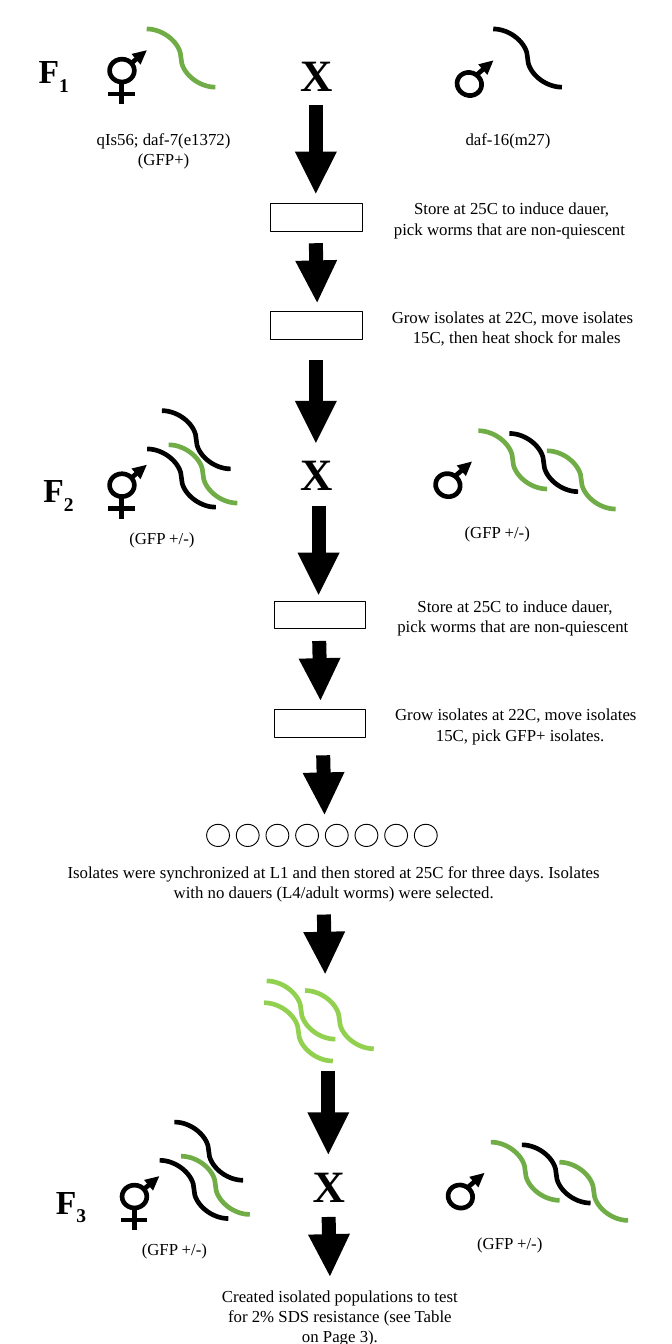
"""Builds a one-slide flow chart of a three-generation worm cross."""
from lxml.etree import SubElement
from pptx import Presentation
from pptx.dml.color import RGBColor
from pptx.enum.shapes import MSO_CONNECTOR as LINK, MSO_SHAPE as SHAPE
from pptx.enum.text import MSO_AUTO_SIZE as FIT, PP_ALIGN as ALIGN
from pptx.oxml.ns import qn
from pptx.util import Pt

BLACK = RGBColor(0x00, 0x00, 0x00)
GREEN = RGBColor(0x70, 0xAD, 0x47)
LIME = RGBColor(0x92, 0xD0, 0x50)
FONT = "Times New Roman"
SYMBOL_LINE = 5
STEP_LINE = 15


def add_label(slide, text, left, top, width, height, size=18, bold=False, wrap=False):
    label = slide.shapes.add_textbox(Pt(left), Pt(top), Pt(width), Pt(height))
    frame = label.text_frame
    frame.text = text
    frame.word_wrap = wrap
    frame.auto_size = FIT.SHAPE_TO_FIT_TEXT
    for paragraph in frame.paragraphs:
        paragraph.alignment = ALIGN.CENTER
        for run in paragraph.runs:
            style_run(run, size, bold)
    return label


def style_run(run, size, bold):
    run.font.name = FONT
    run.font.size = Pt(size)
    run.font.bold = bold
    run.font.color.rgb = BLACK


def add_generation(slide, number, left, top):
    label = add_label(slide, "F", left, top, 49, 51, 36, True)
    subscript = label.text_frame.paragraphs[0].add_run()
    subscript.text = str(number)
    style_run(subscript, 36, True)
    subscript.font._element.set("baseline", "-25000")


def add_cross_mark(slide, left, top):
    add_label(slide, "X", left, top, 50, 65.5, 48, True)


def add_outline(slide, kind, left, top, width, height, weight=1):
    outline = slide.shapes.add_shape(kind, Pt(left), Pt(top), Pt(width), Pt(height))
    outline.shadow.inherit = False
    outline.fill.background()
    outline.line.color.rgb = BLACK
    outline.line.width = Pt(weight)
    return outline


def add_link(slide, x1, y1, x2, y2, weight=SYMBOL_LINE, color=BLACK,
             kind=LINK.STRAIGHT, arrow=False):
    link = slide.shapes.add_connector(kind, Pt(x1), Pt(y1), Pt(x2), Pt(y2))
    link.line.width = Pt(weight)
    link.line.color.rgb = color
    if arrow:
        SubElement(link.line._get_or_add_ln(), qn("a:tailEnd"), type="triangle")
    SubElement(link._element.spPr, qn("a:effectLst"))


def add_step(slide, x, top, bottom, drift=0):
    add_link(slide, x, top, x + drift, bottom, STEP_LINE, arrow=True)


def add_worm(slide, left, top, color):
    add_link(slide, left, top, left + 73.6, top + 62.4, color=color, kind=LINK.CURVE)


def add_hermaphrodite(slide, left, top):
    add_outline(slide, SHAPE.OVAL, left, top, 26.6, 24.5, SYMBOL_LINE)
    add_link(slide, left + 13, top + 24.5, left + 13, top + 48.4)
    add_link(slide, left + 26.8, top + 37.5, left - 1.2, top + 37.5)
    add_link(slide, left + 23.8, top + 4, left + 39.8, top - 9.5, arrow=True)


def add_male(slide, left, top):
    add_link(slide, left + 21, top + 2.6, left + 39, top - 13, arrow=True)
    add_outline(slide, SHAPE.OVAL, left, top, 26.6, 24.5, SYMBOL_LINE).rotation = 20


def add_founder_cross(slide):
    add_generation(slide, 1, 33, 50.4)
    add_hermaphrodite(slide, 117.4, 63.4)
    add_worm(slide, 157.2, 31, GREEN)
    add_label(slide, "qIs56; daf-7(e1372)\n(GFP+)", 95.8, 133.9, 159, 51)
    add_cross_mark(slide, 314, 46.8)
    add_male(slide, 489.6, 77.8)
    add_worm(slide, 528.5, 31, BLACK)
    add_label(slide, "daf-16(m27)", 491, 133.9, 106.6, 29)
    add_step(slide, 338.4, 112.3, 207.4)


def add_offspring_cross(slide, number, dx=0, dy=0):
    add_generation(slide, number, 38.2 + dx, 499 + dy)
    add_hermaphrodite(slide, 117.4 + dx, 507.6 + dy)
    add_male(slide, 466.6 + dx, 507.6 + dy)
    for left, top, color in [(173.5, 440, BLACK), (180.7, 476.6, GREEN),
                             (157.7, 481, BLACK), (545.8, 464.4, BLACK),
                             (512.6, 461.5, GREEN), (586, 483, GREEN)]:
        add_worm(slide, left + dx, top + dy, color)
    for left, top in [(131, 561.6), (490.3, 555.1)]:
        add_label(slide, "(GFP +/-)", left + dx, top + dy, 85, 29)
    add_cross_mark(slide, 314 + dx, 474.5 + dy)
    add_step(slide, 338.4 + dx, 385.2 + dy, 474.5 + dy)


def add_incubation(slide, selection, dx=0, dy=0):
    for top in (218.2, 334.1):
        add_outline(slide, SHAPE.RECTANGLE, 290.2 + dx, top + dy, 98, 29.5)
    add_step(slide, 338.4 + dx, 260.6 + dy, 324 + dy, 1.4)
    add_label(slide, "Store at 25C to induce dauer,\npick worms that are non-quiescent ",
              410.4 + dx, 208.8 + dy, 275.8, 51)
    add_label(slide, f"Grow isolates at 22C, move isolates \n 15C, {selection}",
              411.1 + dx, 324.7 + dy, 280.8, 51)


def add_isolate_selection(slide):
    add_step(slide, 346.3, 809.3, 872.6, 1.4)
    for well in range(8):
        add_outline(slide, SHAPE.OVAL, 221.4 + 31.8 * well, 883.2, 24.5, 23.8)
    add_label(slide, "Isolates were synchronized at L1 and then stored at 25C for three days. "
              "Isolates with no dauers (L4/adult worms) were selected.",
              51.8, 919.4, 612, 51, wrap=True)
    add_step(slide, 347, 979.9, 1043.3, 1.4)
    for left, top in [(285.8, 1051), (283, 1074.4), (326.9, 1061.3)]:
        add_worm(slide, left, top, LIME)


def main():
    deck = Presentation()
    deck.slide_width, deck.slide_height = Pt(720), Pt(1440)
    slide = deck.slides.add_slide(deck.slide_layouts[6])
    add_founder_cross(slide)
    add_incubation(slide, "then heat shock for males")
    add_offspring_cross(slide, 2)
    add_step(slide, 341.3, 542.2, 637.2)
    add_incubation(slide, "pick GFP+ isolates.", 3.6, 426.2)
    add_isolate_selection(slide)
    add_offspring_cross(slide, 3, 13.4, 762.2)
    add_step(slide, 352.1, 1303.9, 1367.3, 1.4)
    add_label(slide, "Created isolated populations to test for 2% SDS resistance "
              "(see Table on Page 3).", 227.5, 1373.8, 273.6, 72.7, wrap=True)
    deck.save("out.pptx")


if __name__ == "__main__":
    main()
